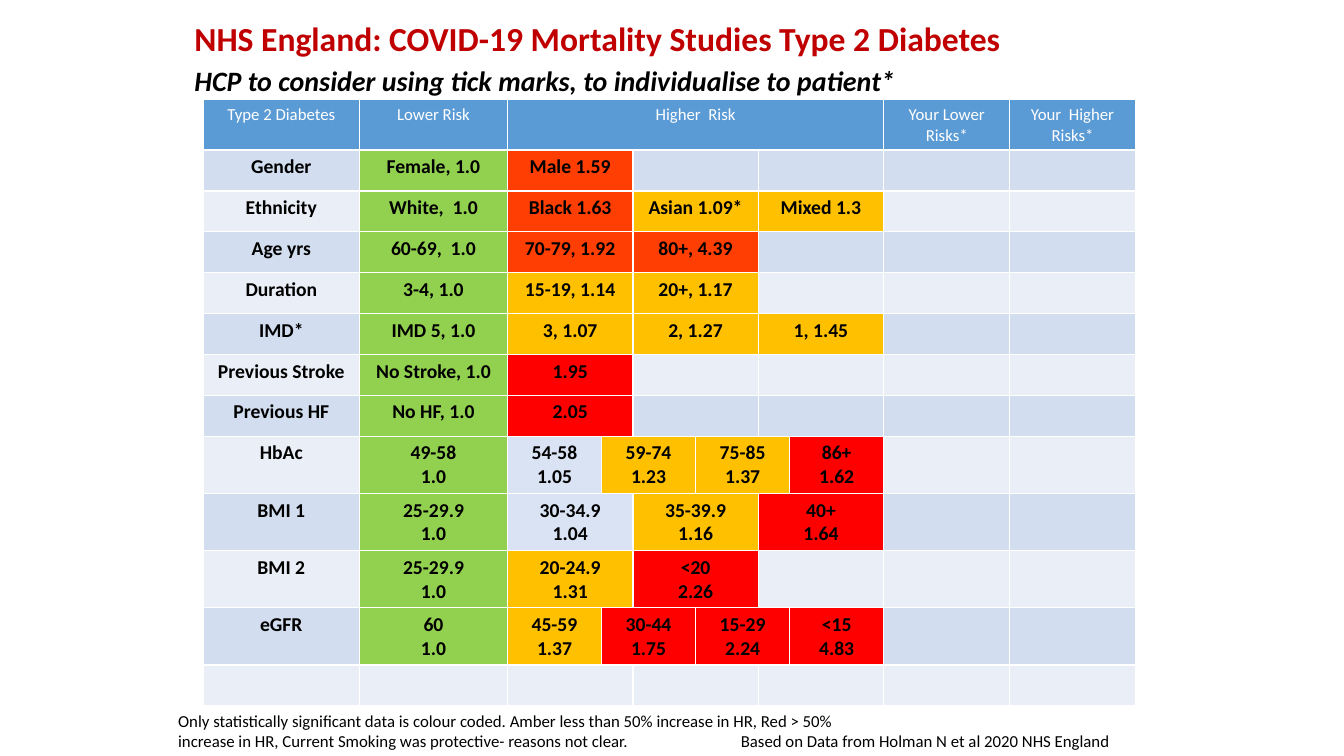
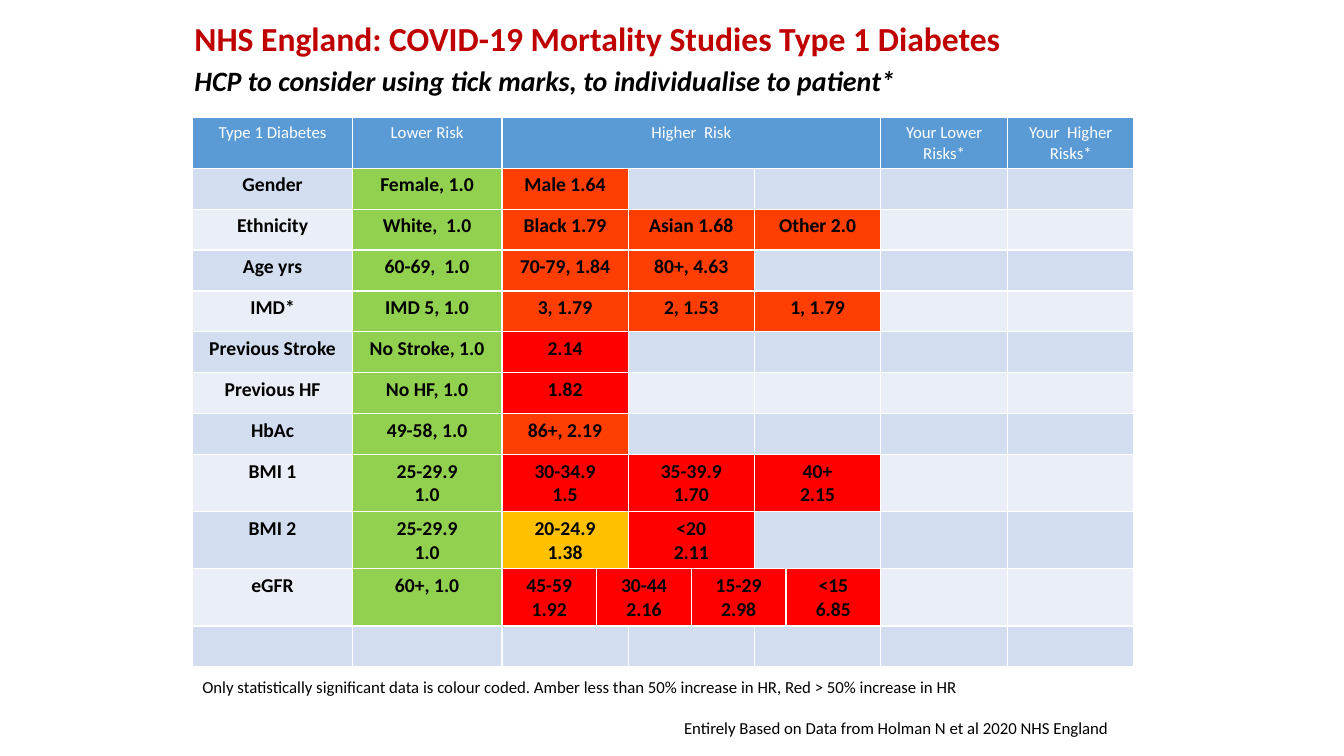
from dataclasses import dataclass

from lxml import etree
from pptx import Presentation
from pptx import util as u
from pptx.dml import color
from pptx.enum import text
from pptx.oxml import ns


@dataclass(frozen=True)
class Theme:
    font: str = "Calibri"
    title: str = "C00000"
    ink: str = "000000"
    white: str = "FFFFFF"
    header: str = "5B9BD5"
    bands: tuple[str, str] = ("EAEFF7", "D2DEEF")
    green: str = "92D050"
    pale: str = "DAE3F3"
    amber: str = "FFC000"
    orange: str = "FE3E02"
    red: str = "FF0000"
    title_size: int = 24
    subtitle_size: int = 20
    body_size: int = 14
    small_size: int = 12
    border: float = 1


THEME = Theme()
ROW_HEIGHT = 1.03
HIGHER_PARTS = (3, 1, 2, 2, 1, 3)
THIRDS = ((2, 3), (4, 5), (6, 7))
QUARTERS = ((2, 2), (3, 4), (5, 6), (7, 7))


@dataclass(frozen=True)
class Style:
    size: int
    colour: str = THEME.ink
    bold: bool = False
    italic: bool = False
    space_before: float = 0


TITLE = Style(THEME.title_size, THEME.title, bold=True, space_before=4.8)
SUBTITLE = Style(THEME.subtitle_size, bold=True, italic=True, space_before=4)
NOTE = Style(THEME.small_size)
HEADER = Style(THEME.small_size, THEME.white)
BODY = Style(THEME.body_size, bold=True)


@dataclass(frozen=True)
class Box:
    left: float
    top: float
    width: float
    height: float


@dataclass(frozen=True)
class Note:
    wording: str
    box: Box


@dataclass(frozen=True)
class Risk:
    wording: str
    colour: str


@dataclass(frozen=True)
class Factor:
    label: str
    lower: str
    higher: tuple[Risk, ...]


@dataclass(frozen=True)
class Study:
    diabetes: str
    left: float
    top: float
    widths: tuple[float, float, float, float, float]
    factors: tuple[Factor, ...]
    notes: tuple[Note, ...]


def pale(wording: str) -> Risk:
    return Risk(wording, THEME.pale)


def amber(wording: str) -> Risk:
    return Risk(wording, THEME.amber)


def orange(wording: str) -> Risk:
    return Risk(wording, THEME.orange)


def red(wording: str) -> Risk:
    return Risk(wording, THEME.red)


TITLE_BOX = Box(4.65, 0.33, 24.56, 2.26)

STUDIES = (
    Study(
        "Type 2 Diabetes", 5.12, 2.51, (3.94, 3.73, 9.48, 3.18, 3.16),
        (
            Factor("Gender", "Female, 1.0", (orange("Male 1.59"),)),
            Factor("Ethnicity", "White,  1.0",
                   (orange("Black 1.63"), amber("Asian 1.09*"), amber("Mixed 1.3"))),
            Factor("Age yrs", "60-69,  1.0", (orange("70-79, 1.92"), orange("80+, 4.39"))),
            Factor("Duration", "3-4, 1.0", (amber("15-19, 1.14"), amber("20+, 1.17"))),
            Factor("IMD*", "IMD 5, 1.0", (amber("3, 1.07"), amber("2, 1.27"), amber("1, 1.45"))),
            Factor("Previous Stroke", "No Stroke, 1.0", (red("1.95"),)),
            Factor("Previous HF", "No HF, 1.0", (red("2.05"),)),
            Factor("HbAc", "49-58\n1.0",
                   (pale("54-58\n1.05"), amber("59-74\n1.23"), amber("75-85\n1.37"), red("86+\n1.62"))),
            Factor("BMI 1", "25-29.9\n1.0",
                   (pale("30-34.9\n1.04"), amber("35-39.9\n1.16"), red("40+\n1.64"))),
            Factor("BMI 2", "25-29.9\n1.0", (amber("20-24.9\n1.31"), red("<20\n2.26"))),
            Factor("eGFR", "60\n1.0",
                   (amber("45-59\n1.37"), red("30-44\n1.75"), red("15-29\n2.24"), red("<15\n4.83"))),
            Factor("", "", ()),
        ),
        (
            Note("Only statistically significant data is colour coded. Amber less than 50% increase in HR, "
                 "Red > 50% increase in HR, Current Smoking was protective- reasons not clear.",
                 Box(4.24, 17.78, 17.78, 1.07)),
            Note("Based on Data from Holman N et al 2020 NHS England", Box(18.42, 18.29, 11.86, 0.76)),
        ),
    ),
    Study(
        "Type 1 Diabetes", 4.86, 2.97, (4.02, 3.77, 9.55, 3.2, 3.18),
        (
            Factor("Gender", "Female, 1.0", (orange("Male 1.64"),)),
            Factor("Ethnicity", "White,  1.0",
                   (orange("Black 1.79"), orange("Asian 1.68"), orange("Other 2.0"))),
            Factor("Age yrs", "60-69,  1.0", (orange("70-79, 1.84"), orange("80+, 4.63"))),
            Factor("IMD*", "IMD 5, 1.0", (orange("3, 1.79"), orange("2, 1.53"), orange("1, 1.79"))),
            Factor("Previous Stroke", "No Stroke, 1.0", (red("2.14"),)),
            Factor("Previous HF", "No HF, 1.0", (red("1.82"),)),
            Factor("HbAc", "49-58, 1.0", (orange("86+, 2.19"),)),
            Factor("BMI 1", "25-29.9\n1.0",
                   (red("30-34.9\n1.5"), red("35-39.9\n1.70"), red("40+\n2.15"))),
            Factor("BMI 2", "25-29.9\n1.0", (amber("20-24.9\n1.38"), red("<20\n2.11"))),
            Factor("eGFR", "60+, 1.0",
                   (red("45-59\n1.92"), red("30-44\n2.16"), red("15-29\n2.98"), red("<15\n6.85"))),
            Factor("", "", ()),
        ),
        (
            Note("Only statistically significant data is colour coded. Amber less than 50% increase in HR, "
                 "Red > 50% increase in HR", Box(4.85, 16.92, 24.56, 1.07)),
            Note("Entirely Based on Data from Holman N et al 2020 NHS England",
                 Box(16.99, 17.96, 11.86, 0.76)),
        ),
    ),
)


def style_paragraph(paragraph, style: Style) -> None:
    font = paragraph.font
    font.name = THEME.font
    font.size = u.Pt(style.size)
    font.bold = style.bold
    font.italic = style.italic
    font.color.rgb = color.RGBColor.from_string(style.colour)
    paragraph.space_before = u.Pt(style.space_before)


def add_text(slide, box: Box, lines: tuple[tuple[str, Style], ...]) -> None:
    shape = slide.shapes.add_textbox(*(u.Cm(n) for n in (box.left, box.top, box.width, box.height)))
    frame = shape.text_frame
    frame.word_wrap = True
    frame.text = "\n".join(wording for wording, _ in lines)
    for paragraph, (_, style) in zip(frame.paragraphs, lines):
        style_paragraph(paragraph, style)


def add_borders(cell) -> None:
    properties = cell._tc.get_or_add_tcPr()
    for edge in ("a:lnL", "a:lnR", "a:lnT", "a:lnB"):
        line = etree.SubElement(properties, ns.qn(edge), w=str(u.Pt(THEME.border)))
        fill = etree.SubElement(line, ns.qn("a:solidFill"))
        etree.SubElement(fill, ns.qn("a:srgbClr"), val=THEME.white)


def fill_cell(table, row: int, columns: tuple[int, int], wording: str, fill: str, style: Style) -> None:
    first, last = columns
    cell = table.cell(row, first)
    if last > first:
        cell.merge(table.cell(row, last))
    for column in range(first, last + 1):
        add_borders(table.cell(row, column))
    cell.fill.solid()
    cell.fill.fore_color.rgb = color.RGBColor.from_string(fill)
    if wording:
        cell.text = wording
        for paragraph in cell.text_frame.paragraphs:
            style_paragraph(paragraph, style)
            paragraph.alignment = text.PP_ALIGN.CENTER


def add_factor(table, row: int, factor: Factor) -> None:
    band = THEME.bands[row % 2]
    slots = QUARTERS if len(factor.higher) == len(QUARTERS) else THIRDS
    blanks = (Risk("", band),) * (len(slots) - len(factor.higher))
    fill_cell(table, row, (0, 0), factor.label, band, BODY)
    fill_cell(table, row, (1, 1), factor.lower, THEME.green if factor.lower else band, BODY)
    for columns, risk in zip(slots, factor.higher + blanks):
        fill_cell(table, row, columns, risk.wording, risk.colour, BODY)
    for column in (8, 9):
        fill_cell(table, row, (column, column), "", band, BODY)


def add_risk_table(slide, study: Study) -> None:
    label, lower, higher, your_lower, your_higher = study.widths
    parts = [higher * part / sum(HIGHER_PARTS) for part in HIGHER_PARTS]
    widths = [label, lower, *parts, your_lower, your_higher]
    rows = len(study.factors) + 1
    table = slide.shapes.add_table(
        rows, len(widths), u.Cm(study.left), u.Cm(study.top),
        u.Cm(sum(widths)), u.Cm(rows * ROW_HEIGHT)).table
    for column, width in zip(table.columns, widths):
        column.width = u.Cm(width)
    for row in table.rows:
        row.height = u.Cm(ROW_HEIGHT)
    headings = (
        ((0, 0), study.diabetes),
        ((1, 1), "Lower Risk"),
        ((2, 7), "Higher  Risk"),
        ((8, 8), "Your Lower\nRisks*"),
        ((9, 9), "Your  Higher Risks*"),
    )
    for columns, wording in headings:
        fill_cell(table, 0, columns, wording, THEME.header, HEADER)
    for row, factor in enumerate(study.factors, start=1):
        add_factor(table, row, factor)


def add_study(presentation, study: Study) -> None:
    slide = presentation.slides.add_slide(presentation.slide_layouts[6])
    add_text(slide, TITLE_BOX, (
        (f"NHS England: COVID-19 Mortality Studies {study.diabetes}", TITLE),
        ("HCP to consider using tick marks, to individualise to patient*", SUBTITLE),
    ))
    add_risk_table(slide, study)
    for note in study.notes:
        add_text(slide, note.box, ((note.wording, NOTE),))


def main() -> None:
    presentation = Presentation()
    presentation.slide_width = u.Cm(33.87)
    presentation.slide_height = u.Cm(19.05)
    for study in STUDIES:
        add_study(presentation, study)
    presentation.save("out.pptx")


if __name__ == "__main__":
    main()
